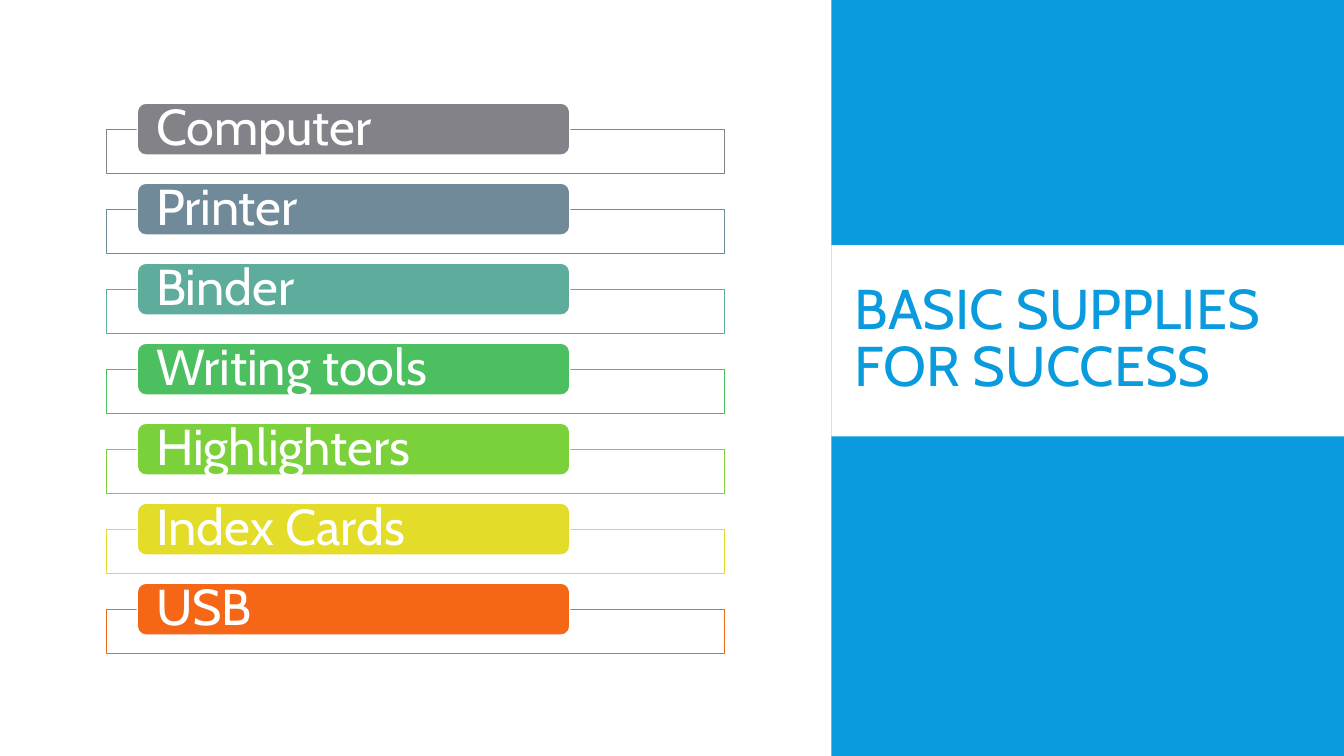
from dataclasses import dataclass

from lxml.etree import SubElement
from pptx import Presentation
from pptx.dml.color import RGBColor
from pptx.enum.shapes import MSO_SHAPE
from pptx.enum.text import MSO_ANCHOR, MSO_AUTO_SIZE, PP_ALIGN
from pptx.oxml.ns import qn
from pptx.shapes.autoshape import Shape
from pptx.slide import Slide
from pptx.util import Cm, Pt


@dataclass(frozen=True)
class Theme:
    font: str = "Cabin"
    blue: str = "099BDD"
    white: str = "FFFFFF"
    head: int = 40
    label: int = 36
    edge: int = 1


@dataclass(frozen=True)
class Box:
    left: float
    top: float
    width: float
    height: float

    def down(self, step: float) -> "Box":
        return Box(self.left, self.top + step, self.width, self.height)

    def place(self) -> tuple[Cm, Cm, Cm, Cm]:
        return Cm(self.left), Cm(self.top), Cm(self.width), Cm(self.height)


@dataclass(frozen=True)
class Supply:
    name: str
    color: str


THEME = Theme()
WIDE, HIGH = 33.87, 19.05
PANEL = Box(20.95, 0, WIDE - 20.95, HIGH)
BAND = Box(20.95, 6.18, WIDE - 20.95, 4.82)
TITLE = Box(21.29, 6.5, 11.48, 4.19)
FRAME = Box(2.69, 3.26, 15.57, 1.11)
TAB = Box(3.46, 2.6, 10.9, 1.31)
PITCH = 2.016
SUPPLIES = [
    Supply("Computer", "828288"),
    Supply("Printer", "708A9A"),
    Supply("Binder", "5EAD9C"),
    Supply("Writing tools", "4CBF61"),
    Supply("Highlighters", "7BD13A"),
    Supply("Index Cards", "E3DC29"),
    Supply("USB", "F56617"),
]


def apply(target: object, style: dict[str, object]) -> None:
    for name, value in style.items():
        setattr(target, name, value)


def draw(slide: Slide, box: Box, fill: str, line: str | None = None,
         kind: MSO_SHAPE = MSO_SHAPE.RECTANGLE) -> Shape:
    shape = slide.shapes.add_shape(kind, *box.place())
    shape.shadow.inherit = False
    shape.fill.solid()
    shape.fill.fore_color.rgb = RGBColor.from_string(fill)
    if line:
        shape.line.color.rgb = RGBColor.from_string(line)
        shape.line.width = Pt(THEME.edge)
    else:
        shape.line.fill.background()
    return shape


def write(shape: Shape, text: str, size: int, color: str,
          space: float, inset: dict[str, object]) -> None:
    frame = shape.text_frame
    frame.text = text
    apply(frame, {"word_wrap": True, "auto_size": MSO_AUTO_SIZE.NONE,
                  "vertical_anchor": MSO_ANCHOR.MIDDLE, **inset})
    para = frame.paragraphs[0]
    apply(para, {"alignment": PP_ALIGN.LEFT, "line_spacing": space,
                 "space_before": Pt(0)})
    font = para.runs[0].font
    apply(font, {"name": THEME.font, "size": Pt(size), "bold": False})
    font.color.rgb = RGBColor.from_string(color)


def add_row(slide: Slide, supply: Supply, step: float) -> None:
    # Thin frame with a slightly clear fill
    frame = draw(slide, FRAME.down(step), THEME.white, supply.color)
    tint = frame.element.spPr.find(qn("a:solidFill"))[0]
    SubElement(tint, qn("a:alpha"), val="90000")
    # Colored tab with the label
    tab = draw(slide, TAB.down(step), supply.color, THEME.white,
               MSO_SHAPE.ROUNDED_RECTANGLE)
    write(tab, supply.name, THEME.label, THEME.white, 0.9,
          {"margin_left": Cm(0.41), "margin_right": Cm(0.41),
           "margin_top": 0, "margin_bottom": 0})


def add_title(slide: Slide) -> None:
    title = slide.shapes.title
    spot = TITLE.place()
    apply(title, dict(zip(("left", "top", "width", "height"), spot)))
    write(title, "BASIC SUPPLIES FOR SUCCESS", THEME.head, THEME.blue, 0.85, {})
    # Bring the title in front of the white band
    title.element.getparent().append(title.element)


def main() -> None:
    deck = Presentation()
    apply(deck, {"slide_width": Cm(WIDE), "slide_height": Cm(HIGH)})
    slide = deck.slides.add_slide(deck.slide_layouts.get_by_name("Title Only"))

    # Right side: blue panel, white band, title
    draw(slide, PANEL, THEME.blue)
    draw(slide, BAND, THEME.white)
    add_title(slide)

    # Left side: one row per supply
    for row, supply in enumerate(SUPPLIES):
        add_row(slide, supply, row * PITCH)

    deck.save("out.pptx")


if __name__ == "__main__":
    main()
